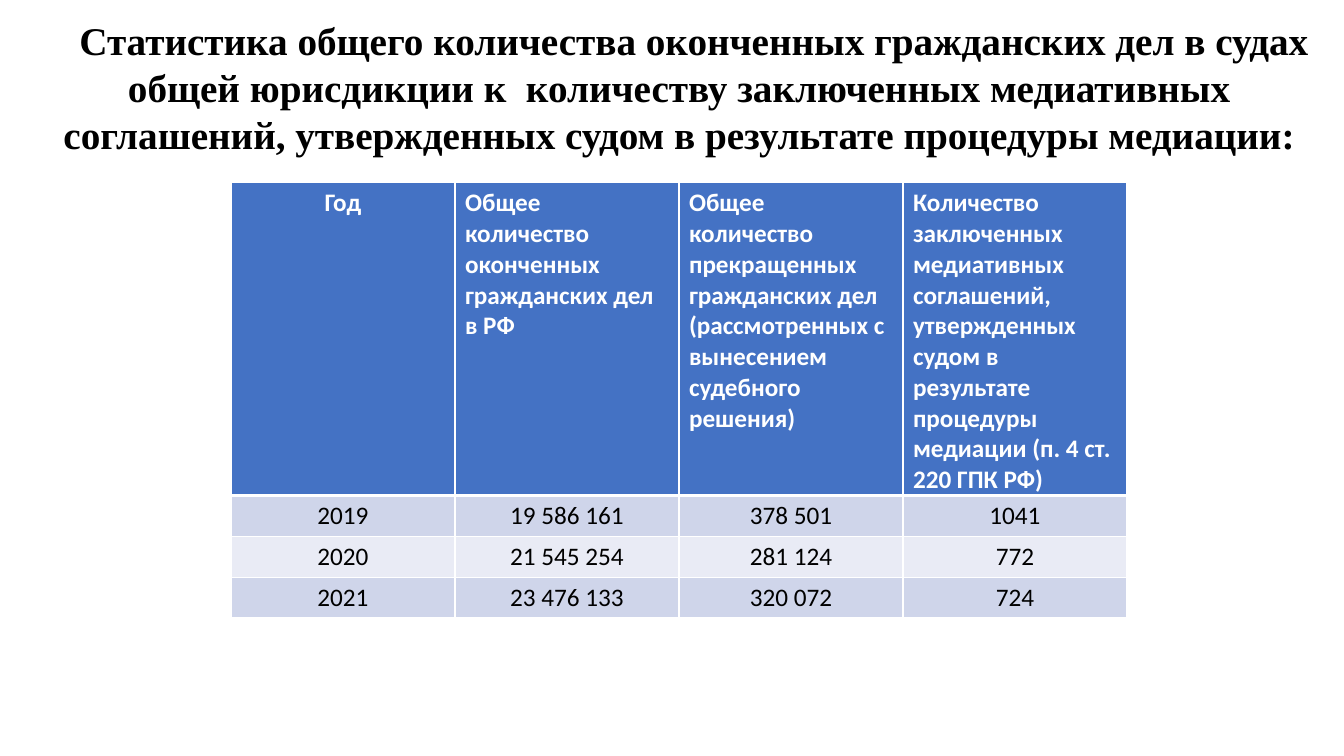
from lxml.etree import SubElement
from pptx import Presentation
from pptx.dml.color import RGBColor
from pptx.enum.text import PP_ALIGN
from pptx.oxml.ns import qn
from pptx.util import Pt

COLORS = {
    "text": "000000",
    "header": "4472C4",
    "odd": "CFD5EA",
    "even": "E9EBF5",
    "white": "FFFFFF",
}
TITLE = (
    "Статистика общего количества оконченных гражданских дел в судах "
    "общей юрисдикции к  количеству заключенных медиативных соглашений, "
    "утвержденных судом в результате процедуры медиации:"
)
HEADINGS = [
    "Год",
    "Общее количество оконченных гражданских дел в РФ",
    "Общее количество прекращенных гражданских дел "
    "(рассмотренных с вынесением судебного решения)",
    "Количество заключенных медиативных соглашений, утвержденных судом "
    "в результате процедуры медиации (п. 4 ст. 220 ГПК РФ)",
]
YEARS = [
    ["2019", "19 586 161", "378 501", "1041"],
    ["2020", "21 545 254", "281 124", "772"],
    ["2021", "23 476 133", "320 072", "724"],
]
HEADER_HEIGHT = 223.4
ROW_HEIGHT = 29.2


def color(name):
    return RGBColor.from_string(COLORS[name])


def add_span(para, text, font_name, size, color_name, bold):
    span = para.add_run()
    span.text = text
    span.font.name = font_name
    span.font.size = Pt(size)
    span.font.bold = bold
    span.font.color.rgb = color(color_name)


def set_borders(cell, top, bottom):
    properties = cell._tc.get_or_add_tcPr()
    widths = {"a:lnL": 1, "a:lnR": 1, "a:lnT": top, "a:lnB": bottom}
    for position, (tag, width) in enumerate(widths.items()):
        line = SubElement(properties, qn(tag), w=str(Pt(width)))
        fill = SubElement(line, qn("a:solidFill"))
        SubElement(fill, qn("a:srgbClr"), val=COLORS["white"])
        properties.insert(position, line)


def add_title(page, left, top, width, height):
    box = page.shapes.add_textbox(Pt(left), Pt(top), Pt(width), Pt(height))
    box.text_frame.word_wrap = True
    para = box.text_frame.paragraphs[0]
    para.alignment = PP_ALIGN.CENTER
    para._p.get_or_add_pPr().set("indent", str(Pt(21)))
    add_span(para, TITLE, "Times New Roman", 28, "text", True)


def add_statistics(page, left, top, width):
    rows = [HEADINGS, *YEARS]
    height = HEADER_HEIGHT + ROW_HEIGHT * len(YEARS)
    table = page.shapes.add_table(
        len(rows), len(HEADINGS), Pt(left), Pt(top), Pt(width), Pt(height)
    ).table
    for column in table.columns:
        column.width = Pt(width / len(HEADINGS))
    for row_index, texts in enumerate(rows):
        is_header = row_index == 0
        table.rows[row_index].height = Pt(HEADER_HEIGHT if is_header else ROW_HEIGHT)
        fill_name = "header" if is_header else ("even", "odd")[row_index % 2]
        for column_index, text in enumerate(texts):
            cell = table.cell(row_index, column_index)
            cell.fill.solid()
            cell.fill.fore_color.rgb = color(fill_name)
            set_borders(cell, 3 if row_index == 1 else 1, 3 if is_header else 1)
            if is_header:
                cell.margin_bottom = Pt(0)
            para = cell.text_frame.paragraphs[0]
            centred = not is_header or column_index == 0
            para.alignment = PP_ALIGN.CENTER if centred else PP_ALIGN.LEFT
            add_span(para, text, "Calibri", 18, "white" if is_header else "text", is_header)


def main():
    deck = Presentation()
    deck.slide_width = Pt(960)
    deck.slide_height = Pt(540)
    page = deck.slides.add_slide(deck.slide_layouts[6])
    add_title(page, 16, 8, 938, 109)
    add_statistics(page, 165, 130.5, 640)
    deck.save("out.pptx")


if __name__ == "__main__":
    main()
